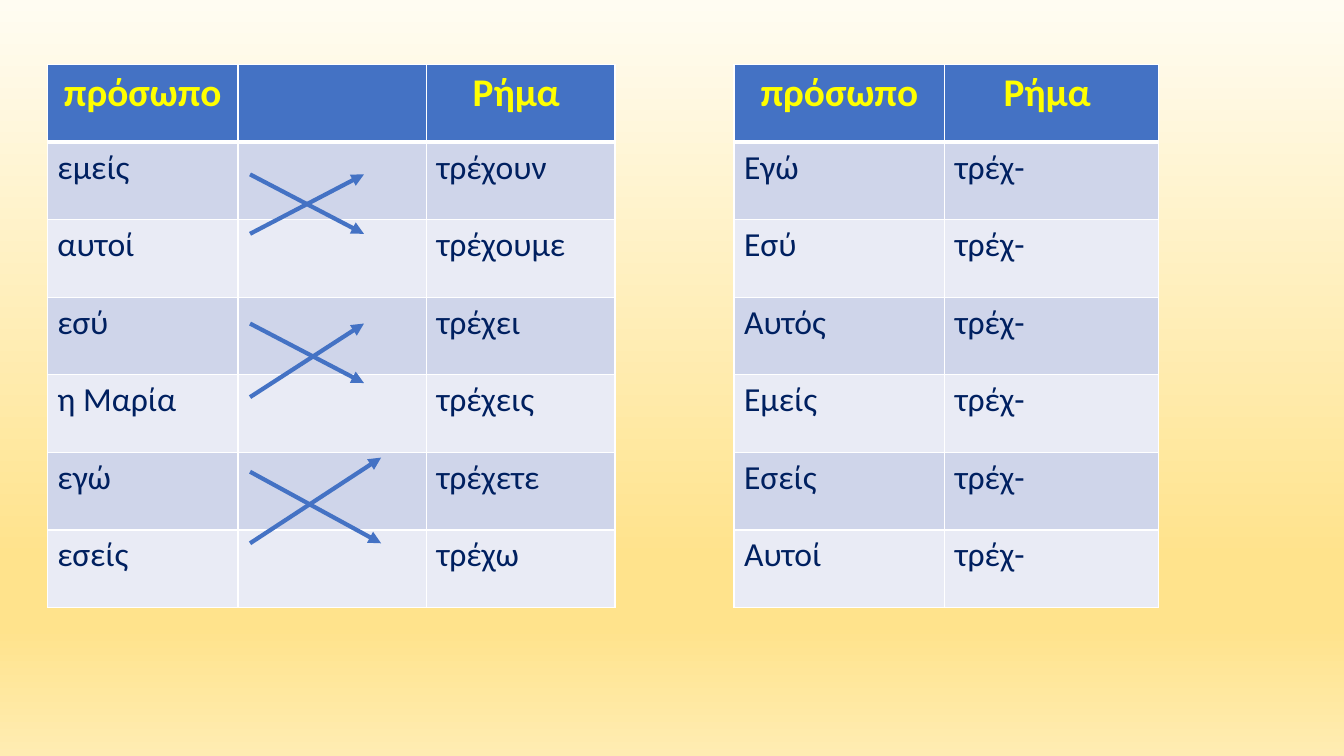
from dataclasses import dataclass
from typing import Any

from lxml.etree import SubElement
from pptx import Presentation
from pptx.dml.color import RGBColor as Color
from pptx.enum.shapes import MSO_CONNECTOR as Connector
from pptx.enum.text import PP_ALIGN as Align
from pptx.oxml.ns import qn
from pptx.slide import Slide
from pptx.table import _Cell as Cell
from pptx.util import Emu, Pt

EMU_PER_PX = 9144


@dataclass(frozen=True)
class Theme:
    font: str = "Calibri"
    header_size: int = 28
    body_size: int = 24
    header_text: str = "FFFF00"
    body_text: str = "002060"
    accent: str = "4472C4"
    bands: tuple[str, str] = ("CFD5EA", "E9EBF5")
    border: str = "FFFFFF"
    thin: int = 1
    thick: int = 3
    background: tuple[tuple[int, str], ...] = (
        (0, "FFFCF2"), (74, "FFE38C"), (83, "FFE38C"), (100, "FFECB2"))


@dataclass(frozen=True)
class VerbTable:
    left: int
    top: int
    row_height: int
    columns: tuple[int, ...]
    rows: tuple[tuple[str, ...], ...]


@dataclass(frozen=True)
class Arrow:
    start: tuple[int, int]
    end: tuple[int, int]


THEME = Theme()
HEADER = ("πρόσωπο", "Ρήμα ")
MATCHES = (("εμείς", "τρέχουν"), ("αυτοί", "τρέχουμε"), ("εσύ", "τρέχει"),
           ("η Μαρία", "τρέχεις"), ("εγώ", "τρέχετε"), ("εσείς", "τρέχω"))
PERSONS = ("Εγώ", "Εσύ", "Αυτός", "Εμείς", "Εσείς", "Αυτοί")

TABLES = (
    VerbTable(47, 64, 77, (189, 187, 187),
              tuple((person, "", verb) for person, verb in (HEADER, *MATCHES))),
    VerbTable(728, 64, 77, (209, 212),
              (HEADER, *((person, "τρέχ-") for person in PERSONS))),
)
ARROWS = (
    Arrow((248, 173), (361, 232)),
    Arrow((248, 232), (361, 173)),
    Arrow((248, 321), (361, 380)),
    Arrow((248, 394), (361, 321)),
    Arrow((248, 468), (378, 539)),
    Arrow((248, 539), (378, 454)),
)


def px(length: int) -> Emu:
    return Emu(length * EMU_PER_PX)


def apply_format(target: Any, values: dict[str, Any]) -> None:
    for name, value in values.items():
        setattr(target, name, value)


def paint_background(slide: Slide) -> None:
    fill = slide.background.fill
    fill.gradient()
    fill.gradient_angle = 270
    stops = slide.element.find(".//" + qn("a:gsLst"))
    for stop in list(stops):
        stops.remove(stop)
    for percent, color in THEME.background:
        stop = SubElement(stops, qn("a:gs"), pos=str(percent * 1000))
        SubElement(stop, qn("a:srgbClr"), val=color)


def add_borders(cell: Cell, row: int) -> None:
    properties = cell._tc.get_or_add_tcPr()
    widths = {"lnL": THEME.thin, "lnR": THEME.thin,
              "lnT": THEME.thick if row == 1 else THEME.thin,
              "lnB": THEME.thick if row == 0 else THEME.thin}
    for edge, width in widths.items():
        line = SubElement(properties, qn(f"a:{edge}"), w=str(Pt(width)))
        fill = SubElement(line, qn("a:solidFill"))
        SubElement(fill, qn("a:srgbClr"), val=THEME.border)


def fill_cell(cell: Cell, text: str, row: int) -> None:
    header = row == 0
    add_borders(cell, row)
    cell.fill.solid()
    cell.fill.fore_color.rgb = Color.from_string(
        THEME.accent if header else THEME.bands[(row - 1) % 2])
    if not text:
        return
    paragraph = cell.text_frame.paragraphs[0]
    paragraph.alignment = Align.CENTER if header else Align.LEFT
    run = paragraph.add_run()
    run.text = text
    apply_format(run.font, {
        "name": THEME.font,
        "size": Pt(THEME.header_size if header else THEME.body_size),
        "bold": header,
    })
    run.font.color.rgb = Color.from_string(
        THEME.header_text if header else THEME.body_text)


def add_verb_table(slide: Slide, verbs: VerbTable) -> None:
    count = len(verbs.rows)
    table = slide.shapes.add_table(
        count, len(verbs.columns), px(verbs.left), px(verbs.top),
        px(sum(verbs.columns)), px(verbs.row_height * count)).table
    for column, width in zip(table.columns, verbs.columns):
        column.width = px(width)
    for row, texts in enumerate(verbs.rows):
        table.rows[row].height = px(verbs.row_height)
        for column, text in enumerate(texts):
            fill_cell(table.cell(row, column), text, row)


def add_arrow(slide: Slide, arrow: Arrow) -> None:
    connector = slide.shapes.add_connector(
        Connector.STRAIGHT, *map(px, arrow.start + arrow.end))
    connector.line.width = Pt(THEME.thick)
    connector.line.color.rgb = Color.from_string(THEME.accent)
    SubElement(connector.line._get_or_add_ln(), qn("a:tailEnd"), type="triangle")
    SubElement(connector._element.spPr, qn("a:effectLst"))


def main() -> None:
    presentation = Presentation()
    apply_format(presentation, {"slide_width": px(1333), "slide_height": px(750)})
    slide = presentation.slides.add_slide(presentation.slide_layouts[6])
    paint_background(slide)
    matching, endings = TABLES
    add_verb_table(slide, matching)
    for arrow in ARROWS:
        add_arrow(slide, arrow)
    add_verb_table(slide, endings)
    presentation.save("out.pptx")


if __name__ == "__main__":
    main()
